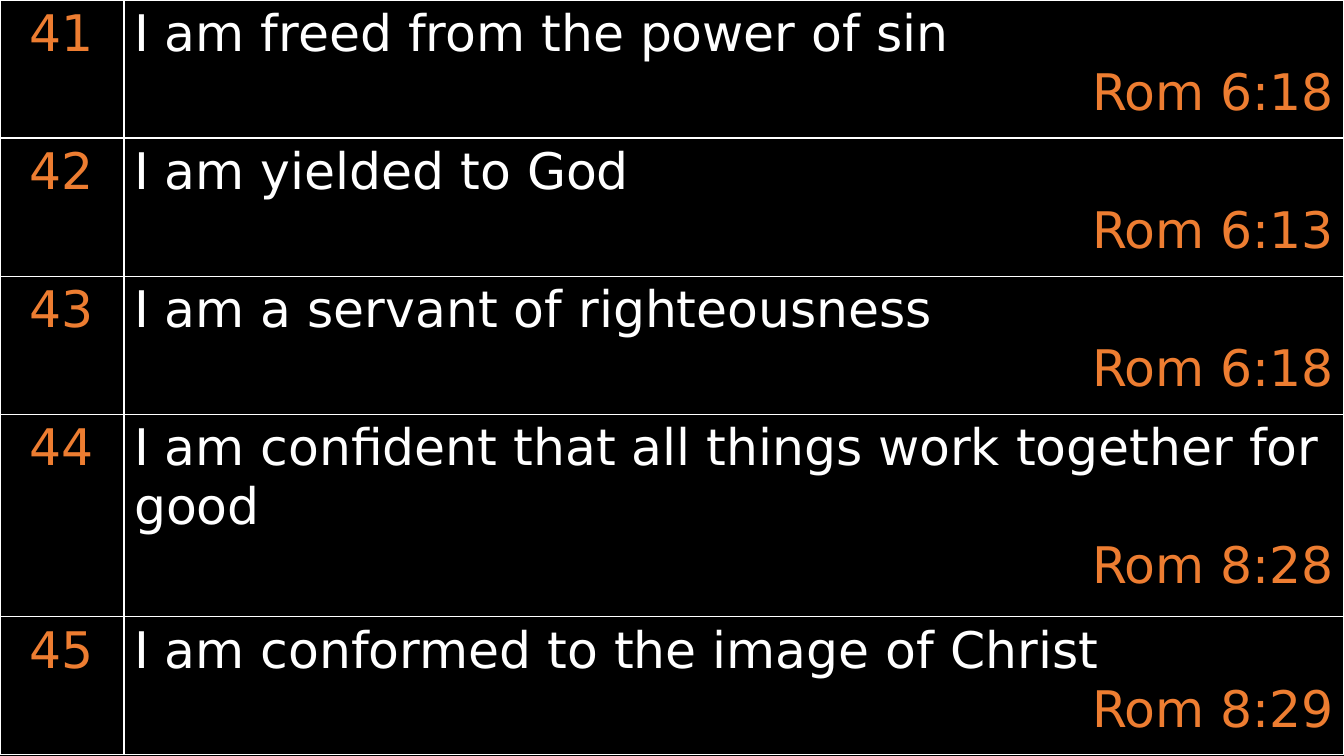
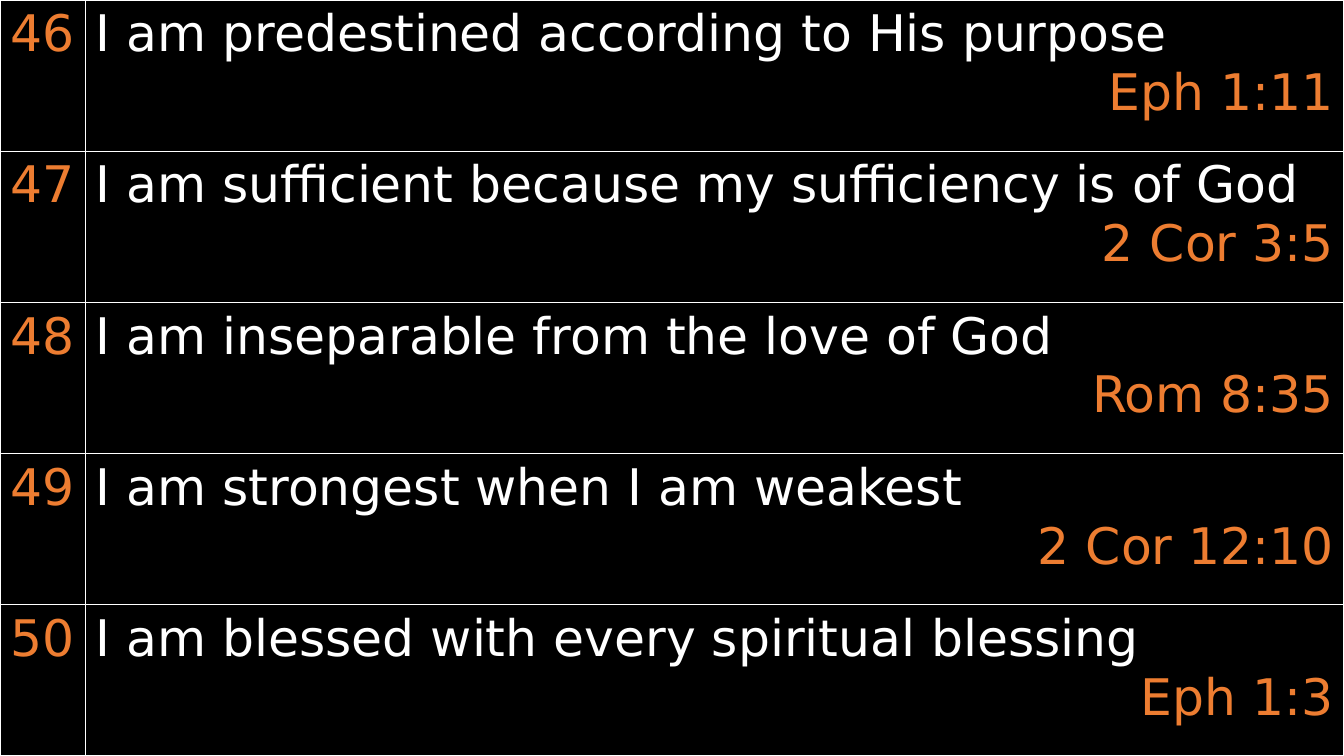
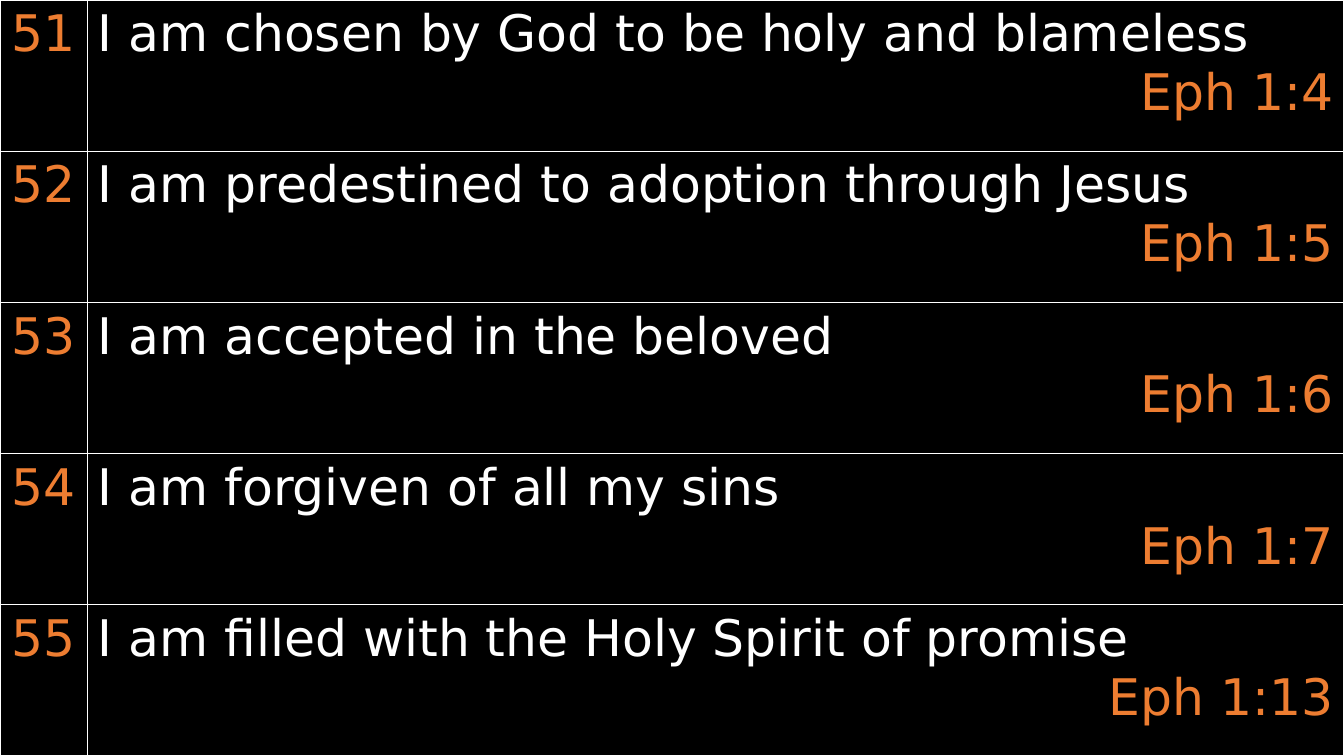
import pptx
import pptx.dml.color
import pptx.enum.text
import pptx.oxml
import pptx.oxml.ns
import pptx.util
from pptx.util import Inches

BLACK, WHITE, ORANGE = "000000", "FFFFFF", "ED7D31"
FONT, SIZE = "DejaVu Sans", 36
WIDTH, HEIGHT = 13.33, 7.5
ALIGN = pptx.enum.text.PP_ALIGN
BORDER = (
    '<a:{side} {ns} w="12700"><a:solidFill><a:srgbClr val="{color}"/>'
    "</a:solidFill></a:{side}>"
)

# Each slide: first number, width of the number column, row heights, verses
SLIDES = [
    (41, 1.23, [1.37, 1.37, 1.37, 2.01, 1.37], [
        ("I am freed from the power of sin", "Rom 6:18"),
        ("I am yielded to God", "Rom 6:13"),
        ("I am a servant of righteousness", "Rom 6:18"),
        ("I am confident that all things work together for good", "Rom 8:28"),
        ("I am conformed to the image of Christ", "Rom 8:29"),
    ]),
    (46, 0.85, [1.5] * 5, [
        ("I am predestined according to His purpose", "Eph 1:11"),
        ("I am sufficient because my sufficiency is of God", "2 Cor 3:5"),
        ("I am inseparable from the love of God", "Rom 8:35"),
        ("I am strongest when I am weakest", "2 Cor 12:10"),
        ("I am blessed with every spiritual blessing", "Eph 1:3"),
    ]),
    (51, 0.87, [1.5] * 5, [
        ("I am chosen by God to be holy and blameless", "Eph 1:4"),
        ("I am predestined to adoption through Jesus", "Eph 1:5"),
        ("I am accepted in the beloved", "Eph 1:6"),
        ("I am forgiven of all my sins", "Eph 1:7"),
        ("I am filled with the Holy Spirit of promise", "Eph 1:13"),
    ]),
]


def paint(fill, color):
    fill.solid()
    fill.fore_color.rgb = pptx.dml.color.RGBColor.from_string(color)


def write(para, text, color=ORANGE, align=ALIGN.LEFT):
    para.alignment = align
    run = para.add_run()
    run.text = text
    run.font.name = FONT
    run.font.size = pptx.util.Pt(SIZE)
    paint(run.font.fill, color)


deck = pptx.Presentation()
deck.slide_width, deck.slide_height = Inches(WIDTH), Inches(HEIGHT)
paint(deck.slide_master.background.fill, BLACK)

for first, left, heights, verses in SLIDES:
    slide = deck.slides.add_slide(deck.slide_layouts[6])
    table = slide.shapes.add_table(
        len(verses), 2, 0, 0, Inches(WIDTH), Inches(HEIGHT)
    ).table
    table.first_row = table.horz_banding = False
    table.columns[0].width = Inches(left)
    table.columns[1].width = Inches(WIDTH - left)

    for row, height in zip(table.rows, heights):
        row.height = Inches(height)

    for cell in table.iter_cells():
        props = cell._tc.get_or_add_tcPr()
        for side in ("lnL", "lnR", "lnT", "lnB"):
            props.append(pptx.oxml.parse_xml(BORDER.format(
                side=side, ns=pptx.oxml.ns.nsdecls("a"), color=WHITE)))
        paint(cell.fill, BLACK)

    for index, (verse, source) in enumerate(verses):
        number = table.cell(index, 0).text_frame
        write(number.paragraphs[0], str(first + index), align=ALIGN.CENTER)
        body = table.cell(index, 1).text_frame
        write(body.paragraphs[0], verse, color=WHITE)
        write(body.add_paragraph(), source, align=ALIGN.RIGHT)

deck.save("out.pptx")
